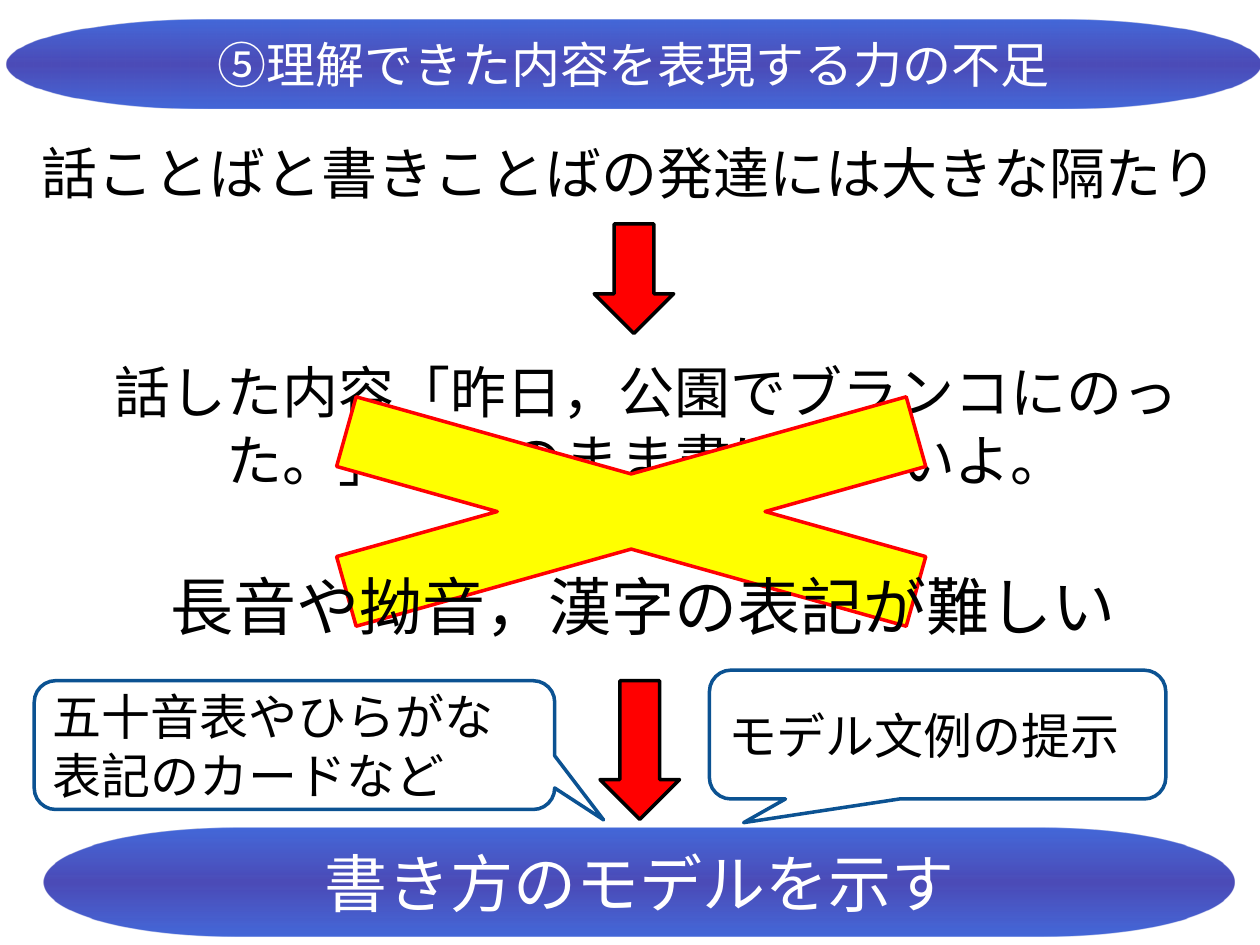
from lxml.etree import SubElement
from pptx import Presentation
from pptx.dml.color import RGBColor
from pptx.enum.shapes import MSO_SHAPE as Preset
from pptx.enum.text import MSO_ANCHOR as Anchor, MSO_AUTO_SIZE as AutoSize, PP_ALIGN as Align
from pptx.oxml.ns import qn
from pptx.util import Pt

BLACK = RGBColor(0x00, 0x00, 0x00)
WHITE = RGBColor(0xFF, 0xFF, 0xFF)
RED = RGBColor(0xFF, 0x00, 0x00)
YELLOW = RGBColor(0xFF, 0xFF, 0x00)
CALLOUT_BLUE = RGBColor(0x0B, 0x52, 0x92)
BANNER_EDGE = RGBColor(0x00, 0x33, 0xCC)
BANNER_MIDDLE = RGBColor(0x00, 0x00, 0x99)

BANNER_STOPS = [(0, BANNER_EDGE, 73), (50, BANNER_MIDDLE, 70), (100, BANNER_EDGE, 73)]


def write(shape, text, size, color=BLACK, font="Arial", align=Align.CENTER,
          anchor=Anchor.MIDDLE, wrap=True):
    frame = shape.text_frame
    frame.text = text
    frame.word_wrap = wrap
    frame.vertical_anchor = anchor
    para = frame.paragraphs[0]
    para.alignment = align
    para.font.name = font
    para.font.size = Pt(size)
    para.font.color.rgb = color


def add_shape(slide, preset, left, top, width, height):
    shape = slide.shapes.add_shape(preset, Pt(left), Pt(top), Pt(width), Pt(height))
    shape.shadow.inherit = False
    return shape


def add_outlined(slide, preset, place, fill, line):
    shape = add_shape(slide, preset, *place)
    shape.fill.solid()
    shape.fill.fore_color.rgb = fill
    shape.line.color.rgb = line
    shape.line.width = Pt(2)
    return shape


def add_banner(slide, *place):
    """Add a rounded bar with a translucent three-stop vertical gradient."""
    banner = add_shape(slide, Preset.FLOWCHART_TERMINATOR, *place)
    banner.line.fill.background()
    banner.fill.gradient()
    banner.fill.gradient_angle = 270
    stops = banner._element.spPr.find(qn("a:gradFill")).find(qn("a:gsLst"))
    for stop in list(stops):
        stops.remove(stop)
    for position, color, opacity in BANNER_STOPS:
        stop = SubElement(stops, qn("a:gs"), pos=str(position * 1000))
        tint = SubElement(stop, qn("a:srgbClr"), val=str(color))
        SubElement(tint, qn("a:alpha"), val=str(opacity * 1000))
    return banner


def add_title(slide, text, left, top, width, height):
    banner = add_banner(slide, left, top, width, height)
    title = slide.shapes.title
    title.left, title.top, title.width, title.height = map(Pt, (left, top, width, height))
    write(title, text, 28, WHITE, wrap=False)
    title.text_frame.auto_size = AutoSize.NONE
    title._element.addprevious(banner._element)


def add_statement(slide, text, size, left, top, width, height):
    box = slide.shapes.add_textbox(Pt(left), Pt(top), Pt(width), Pt(height))
    write(box, text, size, anchor=Anchor.TOP)
    box.text_frame.auto_size = AutoSize.SHAPE_TO_FIT_TEXT


def add_callout(slide, text, place, tip):
    callout = add_outlined(slide, Preset.ROUNDED_RECTANGULAR_CALLOUT, place,
                           WHITE, CALLOUT_BLUE)
    callout.adjustments[0], callout.adjustments[1] = tip
    write(callout, text, 28, font="Noto Sans CJK JP", align=Align.LEFT)


def main():
    deck = Presentation()
    deck.slide_width, deck.slide_height = Pt(720), Pt(540)
    slide = deck.slides.add_slide(deck.slide_layouts[5])

    add_title(slide, "⑤理解できた内容を表現する力の不足", 4, 11, 716, 51)
    add_statement(slide, "話ことばと書きことばの発達には大きな隔たり", 32, 0, 75.6, 720, 46)
    add_outlined(slide, Preset.DOWN_ARROW, (339.6, 128, 45.4, 62.6), RED, BLACK)
    add_statement(slide, "話した内容「昨日，公園でブランコにのった。」をそのまま書けばいいよ。",
                  32, 19.4, 201, 700.6, 85)
    add_outlined(slide, Preset.MATH_MULTIPLY, (47.5, 204.5, 626.4, 175.7), YELLOW, RED)
    add_statement(slide, "長音や拗音，漢字の表記が難しい", 36, 0, 321, 734.4, 51)

    conclusion = add_banner(slide, 25.2, 473, 680.4, 62)
    write(conclusion, "書き方のモデルを示す", 36, WHITE, wrap=False)
    add_outlined(slide, Preset.DOWN_ARROW, (342.9, 389, 45.4, 79.2), RED, BLACK)
    add_callout(slide, "五十音表やひらがな表記のカードなど", (19.6, 389, 297.4, 73.6), (0.594, 0.581))
    add_callout(slide, "モデル文例の提示", (405.4, 383, 260.8, 73.6), (-0.425, 0.684))

    deck.save("out.pptx")


if __name__ == "__main__":
    main()
